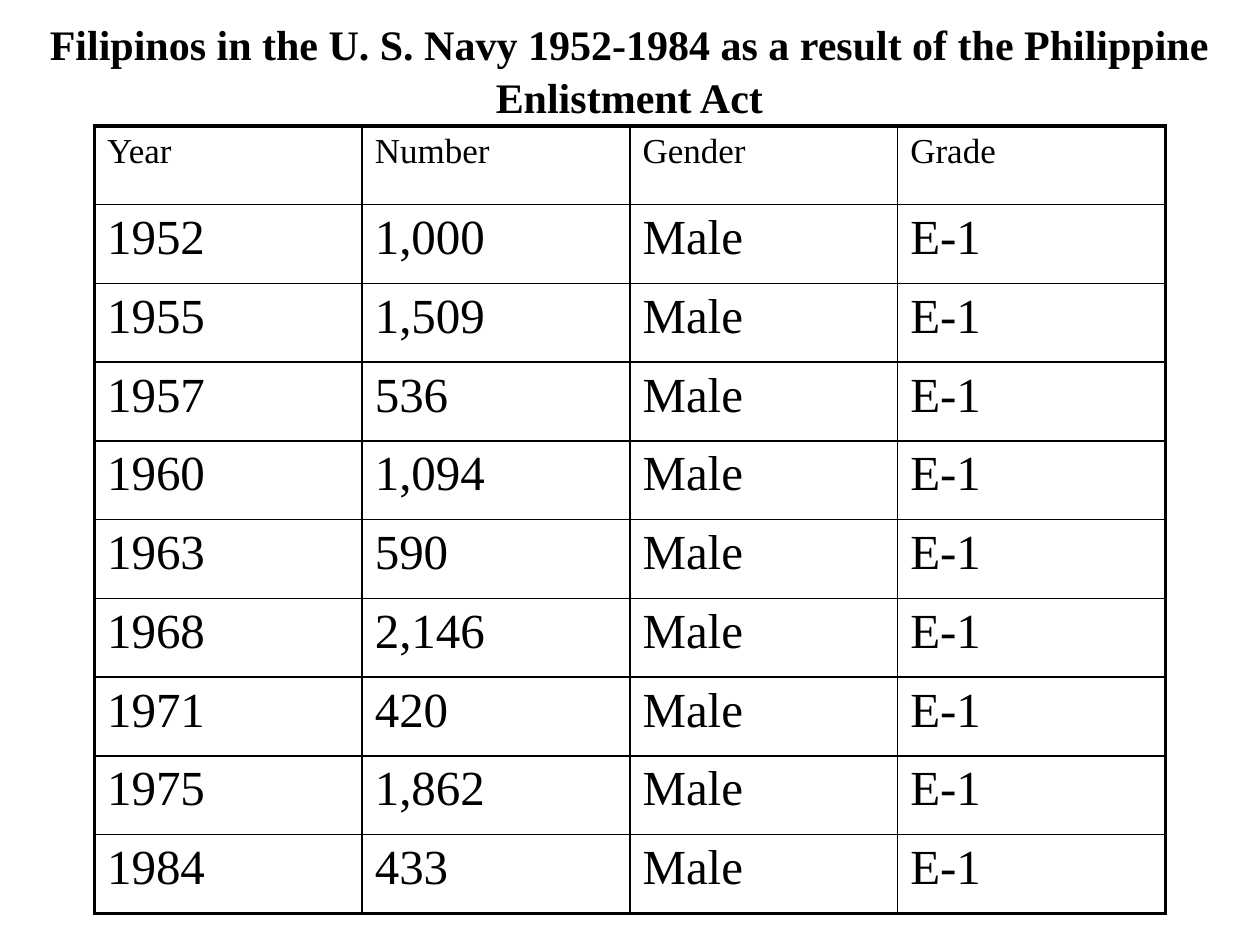
import pptx
import pptx.dml.color
import pptx.enum.text
import pptx.oxml.ns
import pptx.util
from lxml import etree

BLACK = pptx.dml.color.RGBColor(0, 0, 0)
FONT = "Times New Roman"
WIDTH = pptx.util.Inches(10)
HEIGHT = pptx.util.Inches(7.5)
THIN, THICK = 1, 2.25

HEADINGS = ("Year", "Number", "Gender", "Grade")
ENLISTED = (
    ("1952", "1,000"),
    ("1955", "1,509"),
    ("1957", "536"),
    ("1960", "1,094"),
    ("1963", "590"),
    ("1968", "2,146"),
    ("1971", "420"),
    ("1975", "1,862"),
    ("1984", "433"),
)


def style(paragraph, size, bold=False):
    font = paragraph.font
    font.name = FONT
    font.size = pptx.util.Pt(size)
    font.bold = bold
    font.color.rgb = BLACK


def add_title(slide, box, wording):
    title = slide.shapes.title
    title.left, title.top, title.width, title.height = box
    frame = title.text_frame
    frame.text = wording
    frame.word_wrap = True
    frame.auto_size = pptx.enum.text.MSO_AUTO_SIZE.NONE
    frame.vertical_anchor = pptx.enum.text.MSO_ANCHOR.MIDDLE
    heading = frame.paragraphs[0]
    heading.alignment = pptx.enum.text.PP_ALIGN.CENTER
    heading.line_spacing = 1.05
    style(heading, 24, bold=True)


def add_border(cell, side, points):
    qn = pptx.oxml.ns.qn
    properties = cell._tc.get_or_add_tcPr()
    line = etree.SubElement(properties, qn(f"a:ln{side}"), w=str(pptx.util.Pt(points)))
    fill = etree.SubElement(line, qn("a:solidFill"))
    etree.SubElement(fill, qn("a:srgbClr"), val=str(BLACK))


def add_enlistment_table(slide, box, records):
    rows, columns = len(records), len(records[0])
    table = slide.shapes.add_table(rows, columns, *box).table
    table.first_row = False
    table.horz_banding = False
    for column in table.columns:
        column.width = box[2] // columns
    for row in table.rows:
        row.height = box[3] // rows
    for r, record in enumerate(records):
        for c, value in enumerate(record):
            cell = table.cell(r, c)
            cell.text = value
            style(cell.text_frame.paragraphs[0], 20 if r == 0 else 28)
            outer_edges = {"L": c == 0, "R": c == columns - 1, "T": r == 0, "B": r == rows - 1}
            for side, outer in outer_edges.items():
                add_border(cell, side, THICK if outer else THIN)
            cell.fill.background()


def share(left, top, width, height):
    return int(WIDTH * left), int(HEIGHT * top), int(WIDTH * width), int(HEIGHT * height)


def main():
    deck = pptx.Presentation()
    deck.slide_width, deck.slide_height = WIDTH, HEIGHT
    slide = deck.slides.add_slide(deck.slide_layouts[5])
    add_title(
        slide,
        share(0.008, 0.023, 0.983, 0.1),
        "Filipinos in the U. S. Navy 1952-1984 as a result of the Philippine Enlistment Act",
    )
    records = [HEADINGS] + [(year, number, "Male", "E-1") for year, number in ENLISTED]
    add_enlistment_table(slide, share(0.075, 2 / 15, 0.85, 5 / 6), records)
    deck.save("out.pptx")


if __name__ == "__main__":
    main()
